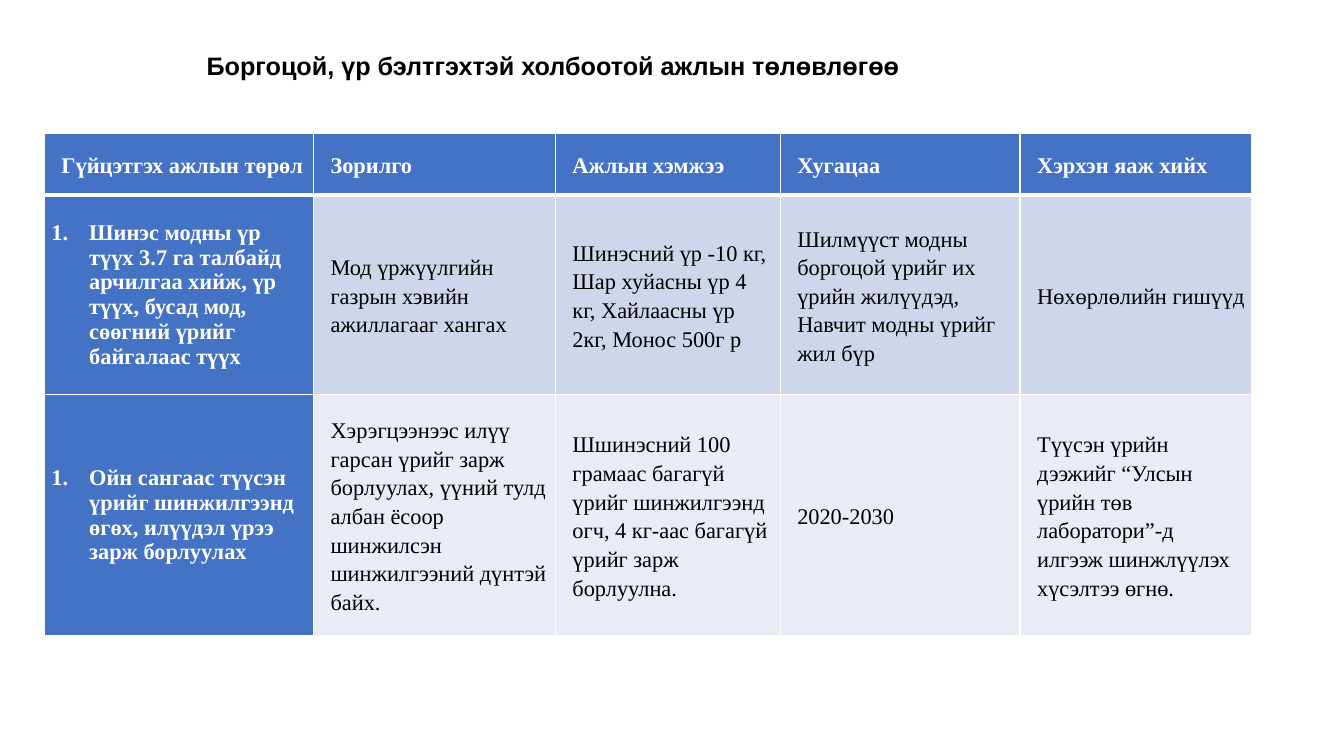
from dataclasses import dataclass

from lxml import etree
from pptx import Presentation
from pptx import util as u
from pptx.dml.color import RGBColor
from pptx.enum import text
from pptx.oxml import ns


@dataclass(frozen=True)
class Theme:
    title_font: str = "Arial"
    table_font: str = "Times New Roman"
    title_size: float = 18
    table_size: float = 16
    dark: str = "000000"
    light: str = "FFFFFF"
    accent: str = "4472C4"
    bands: tuple[str, str] = ("CFD5EA", "E9EBF5")
    thin_border: float = 1
    header_border: float = 3


@dataclass(frozen=True)
class CellStyle:
    fill: str
    color: str
    bold: bool
    left_margin: float = 7.2
    indent: float = 0
    line_spacing: float = 1.15
    numbered: bool = False


THEME = Theme()
HEADER = CellStyle(THEME.accent, THEME.light, True)
TASK = CellStyle(THEME.accent, THEME.light, True, 27, -27, 1, True)
DETAILS = [CellStyle(band, THEME.dark, False) for band in THEME.bands]

TITLE = "Боргоцой, үр бэлтгэхтэй холбоотой ажлын төлөвлөгөө"
COLUMN_WIDTHS = (192.24, 172.8, 160.56, 171.36, 165.6)
ROW_HEIGHTS = (43.92, 142.56, 172.08)
PLAN = (
    (
        "Гүйцэтгэх ажлын төрөл",
        "Зорилго",
        "Ажлын хэмжээ",
        "Хугацаа",
        "Хэрхэн яаж хийх",
    ),
    (
        "Шинэс модны үр түүх 3.7 га талбайд арчилгаа хийж, үр түүх, "
        "бусад мод, сөөгний үрийг байгалаас түүх",
        "Мод үржүүлгийн газрын хэвийн ажиллагааг хангах",
        "Шинэсний үр -10 кг, Шар хуйасны үр 4 кг, Хайлаасны үр 2кг, Монос 500г р",
        "Шилмүүст модны боргоцой үрийг их үрийн жилүүдэд, "
        "Навчит модны үрийг жил бүр",
        "Нөхөрлөлийн гишүүд",
    ),
    (
        "Ойн сангаас түүсэн үрийг шинжилгээнд өгөх, илүүдэл үрээ зарж борлуулах",
        "Хэрэгцээнээс илүү гарсан үрийг зарж борлуулах, үүний тулд албан ёсоор "
        "шинжилсэн шинжилгээний дүнтэй байх.",
        "Шшинэсний 100 грамаас багагүй үрийг шинжилгээнд огч, "
        "4 кг-аас багагүй үрийг зарж борлуулна.",
        "2020-2030",
        "Түүсэн үрийн дээжийг “Улсын үрийн төв лаборатори”-д илгээж "
        "шинжлүүлэх хүсэлтээ өгнө.",
    ),
)


def format_font(paragraph, name: str, size: float, color: str, bold: bool) -> None:
    font = paragraph.font
    font.name = name
    font.size = u.Pt(size)
    font.bold = bold
    font.color.rgb = RGBColor.from_string(color)


def add_title(slide) -> None:
    title = slide.shapes.title
    title.left, title.top = u.Pt(140.4), u.Pt(32.4)
    title.width, title.height = u.Pt(514.8), u.Pt(28.8)
    frame = title.text_frame
    frame.text = TITLE
    frame.word_wrap = False
    frame.auto_size = text.MSO_AUTO_SIZE.SHAPE_TO_FIT_TEXT
    frame.vertical_anchor = text.MSO_ANCHOR.TOP
    paragraph = frame.paragraphs[0]
    paragraph.alignment = text.PP_ALIGN.LEFT
    format_font(paragraph, THEME.title_font, THEME.title_size, THEME.dark, True)


def set_borders(cell, top: float, bottom: float) -> None:
    properties = cell._tc.get_or_add_tcPr()
    widths = {
        "a:lnL": THEME.thin_border,
        "a:lnR": THEME.thin_border,
        "a:lnT": top,
        "a:lnB": bottom,
    }
    for position, (tag, width) in enumerate(widths.items()):
        line = etree.Element(ns.qn(tag), w=str(u.Pt(width)))
        fill = etree.SubElement(line, ns.qn("a:solidFill"))
        etree.SubElement(fill, ns.qn("a:srgbClr"), val=THEME.light)
        properties.insert(position, line)


def fill_cell(cell, content: str, style: CellStyle) -> None:
    cell.text = content
    cell.vertical_anchor = text.MSO_ANCHOR.MIDDLE
    cell.margin_left = cell.margin_right = u.Pt(5.04)
    cell.margin_top = cell.margin_bottom = u.Pt(0)
    cell.fill.solid()
    cell.fill.fore_color.rgb = RGBColor.from_string(style.fill)
    paragraph = cell.text_frame.paragraphs[0]
    properties = paragraph._p.get_or_add_pPr()
    properties.set("marL", str(u.Pt(style.left_margin)))
    properties.set("indent", str(u.Pt(style.indent)))
    if style.numbered:
        etree.SubElement(properties, ns.qn("a:buFont"), typeface="+mj-lt")
        etree.SubElement(properties, ns.qn("a:buAutoNum"), type="arabicPeriod")
    paragraph.line_spacing = style.line_spacing
    format_font(
        paragraph, THEME.table_font, THEME.table_size, style.color, style.bold
    )


def cell_style(row: int, column: int) -> CellStyle:
    if row == 0:
        return HEADER
    return TASK if column == 0 else DETAILS[row - 1]


def add_plan_table(slide) -> None:
    table = slide.shapes.add_table(
        len(PLAN),
        len(COLUMN_WIDTHS),
        u.Pt(31.68),
        u.Pt(95.4),
        u.Pt(sum(COLUMN_WIDTHS)),
        u.Pt(sum(ROW_HEIGHTS)),
    ).table
    table.horz_banding = False
    for column, width in zip(table.columns, COLUMN_WIDTHS):
        column.width = u.Pt(width)
    for row, height in zip(table.rows, ROW_HEIGHTS):
        row.height = u.Pt(height)
    for row, contents in enumerate(PLAN):
        top = THEME.header_border if row == 1 else THEME.thin_border
        bottom = THEME.header_border if row == 0 else THEME.thin_border
        for column, content in enumerate(contents):
            cell = table.cell(row, column)
            fill_cell(cell, content, cell_style(row, column))
            set_borders(cell, top, bottom)


def main() -> None:
    presentation = Presentation()
    presentation.slide_width = u.Pt(960)
    presentation.slide_height = u.Pt(540)
    slide = presentation.slides.add_slide(presentation.slide_layouts[5])
    add_title(slide)
    add_plan_table(slide)
    presentation.save("out.pptx")


if __name__ == "__main__":
    main()
